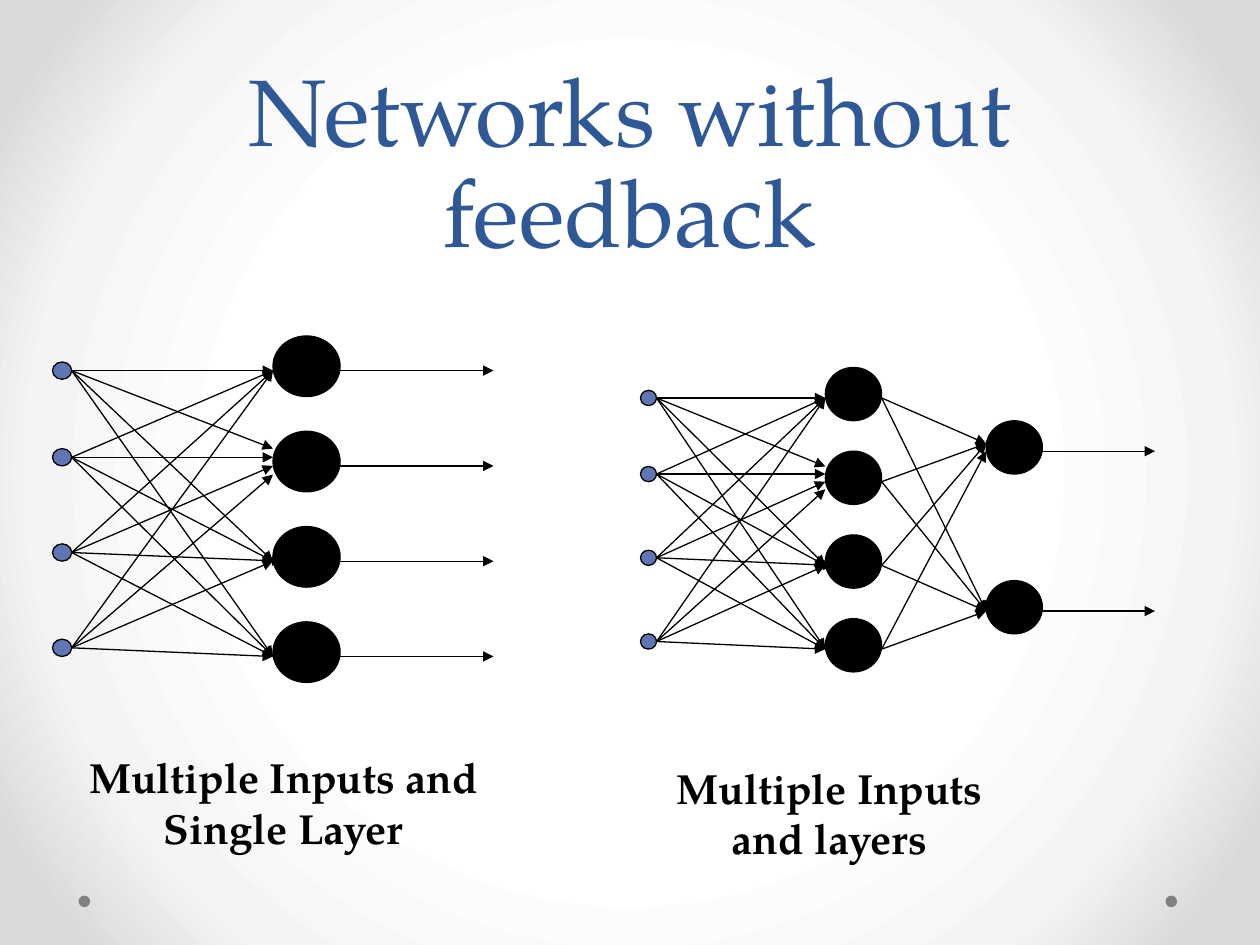
import pptx
import pptx.util
import pptx.dml.color
import pptx.enum.shapes
import pptx.enum.text
import pptx.oxml
import pptx.oxml.ns
import lxml.etree

Pt = pptx.util.Pt
RGB = pptx.dml.color.RGBColor
OVAL = pptx.enum.shapes.MSO_SHAPE.OVAL
LINE = pptx.enum.shapes.MSO_CONNECTOR.STRAIGHT
CENTER = pptx.enum.text.PP_ALIGN.CENTER

BLACK = RGB(0x00, 0x00, 0x00)
BLUE = RGB(0x2F, 0x58, 0x97)
INPUT = RGB(0x60, 0x76, 0xB4)
GRAY = RGB(0x80, 0x80, 0x80)
GLOW = [(50, RGB(0xFF, 0xFF, 0xFF)), (76, RGB(0xF4, 0xF4, 0xF4)),
        (92, RGB(0xDA, 0xDA, 0xDA))]
FONT = "TeX Gyre Pagella"

# Networks are laid out on a grid of units, 40 units high
ROWS = 40
DOT, NODE = 2, 7
INS = [4, 14, 25, 36]
NODES = [0, 11, 22, 33]
OUTS = [4, 15, 26, 37]
FIRST = 23              # left of the first layer
SECOND = 43             # left of the second layer
TOPS = [7, 28]
ENDS = [11, 32]


def add_oval(shapes, x, y, w, h, color, line=None):
    oval = shapes.add_shape(OVAL, Pt(x), Pt(y), Pt(w), Pt(h))
    oval.shadow.inherit = False
    oval.fill.solid()
    oval.fill.fore_color.rgb = color
    if line is None:
        oval.line.fill.background()
    else:
        oval.line.color.rgb = line
        oval.line.width = Pt(0.75)


def add_arrow(shapes, x1, y1, x2, y2):
    arrow = shapes.add_connector(LINE, Pt(x1), Pt(y1), Pt(x2), Pt(y2))
    arrow.line.color.rgb = BLACK
    arrow.line.width = Pt(0.75)
    qn = pptx.oxml.ns.qn
    lxml.etree.SubElement(arrow.line._get_or_add_ln(), qn("a:tailEnd"), type="triangle")
    lxml.etree.SubElement(arrow._element.spPr, qn("a:effectLst"))


def add_net(slide, left, top, width, height, cols, deep=False):
    shapes = slide.shapes.add_group_shape().shapes
    ux, uy = width / cols, height / ROWS

    def oval(x, y, size, color):
        add_oval(shapes, left + x * ux, top + y * uy, size * ux, size * uy,
                 color, BLACK)

    def arrow(x1, y1, x2, y2):
        add_arrow(shapes, left + x1 * ux, top + y1 * uy,
                  left + x2 * ux, top + y2 * uy)

    # Nodes and inputs
    for y in NODES:
        oval(FIRST, y, NODE, BLACK)
    for y in INS:
        oval(0, y - DOT / 2, DOT, INPUT)

    # Every input feeds every node; tips fan out on the second node
    for i, y in enumerate(INS):
        for j, tip in enumerate(OUTS):
            inset = 1 if i == j == 2 else 0
            arrow(DOT, y, FIRST + inset, 13 + i if j == 1 else tip)

    # Second layer
    last, ends = FIRST + NODE, OUTS
    if deep:
        for y in TOPS:
            oval(SECOND, y, NODE, BLACK)
        for y in OUTS:
            upper = ENDS[0] if y == OUTS[-1] else ENDS[0] - 1
            for tip in (upper, ENDS[1]):
                arrow(last, y, SECOND, tip)
        last, ends = SECOND + NODE, ENDS

    # Outputs
    for y in ends:
        arrow(last, y, cols, y)


def add_label(slide, left, top, width, height, text):
    box = slide.shapes.add_textbox(Pt(left), Pt(top), Pt(width), Pt(height))
    box.text_frame.word_wrap = True
    para = box.text_frame.paragraphs[0]
    para.text = text
    para.alignment = CENTER
    para.font.name = FONT
    para.font.size = Pt(24)
    para.font.bold = True
    para.font.color.rgb = BLACK


def set_title(slide, left, top, width, height, text):
    title = slide.shapes.title
    title.left, title.top = Pt(left), Pt(top)
    title.width, title.height = Pt(width), Pt(height)
    frame = title.text_frame
    frame.text = text
    frame.word_wrap = True
    frame.auto_size = pptx.enum.text.MSO_AUTO_SIZE.NONE
    frame.vertical_anchor = pptx.enum.text.MSO_ANCHOR.BOTTOM
    para = frame.paragraphs[0]
    para.alignment = CENTER
    para.line_spacing = Pt(58)
    para.font.name = FONT
    para.font.size = Pt(54)
    para.font.color.rgb = BLUE


def set_back(slide):
    fill = slide.background.fill
    fill.gradient()
    stops = "".join(
        f'<a:gs pos="{pos * 1000}"><a:srgbClr val="{color}"/></a:gs>'
        for pos, color in GLOW)
    grad = pptx.oxml.parse_xml(
        f'<a:gradFill {pptx.oxml.ns.nsdecls("a")} rotWithShape="1">'
        f'<a:gsLst>{stops}</a:gsLst><a:path path="circle">'
        '<a:fillToRect l="50000" t="50000" r="50000" b="50000"/>'
        '</a:path></a:gradFill>')
    old = slide._element.find(".//" + pptx.oxml.ns.qn("a:gradFill"))
    old.getparent().replace(old, grad)


def main():
    deck = pptx.Presentation()
    deck.slide_width, deck.slide_height = Pt(720), Pt(540)
    slide = deck.slides.add_slide(deck.slide_layouts[5])
    set_back(slide)

    # Corner dots
    for x in (666, 44.9):
        add_oval(slide.shapes, x, 511.8, 6.6, 6.6, GRAY)

    set_title(slide, 36, 30, 648, 126, "Networks without feedback")

    add_net(slide, 30, 192, 252, 198, 46)
    add_net(slide, 366, 210, 294, 174, 64, deep=True)

    add_label(slide, 36, 426, 252, 65, "Multiple Inputs and Single Layer")
    add_label(slide, 360, 432, 228, 65, "Multiple Inputs and layers")

    deck.save("out.pptx")


if __name__ == "__main__":
    main()
